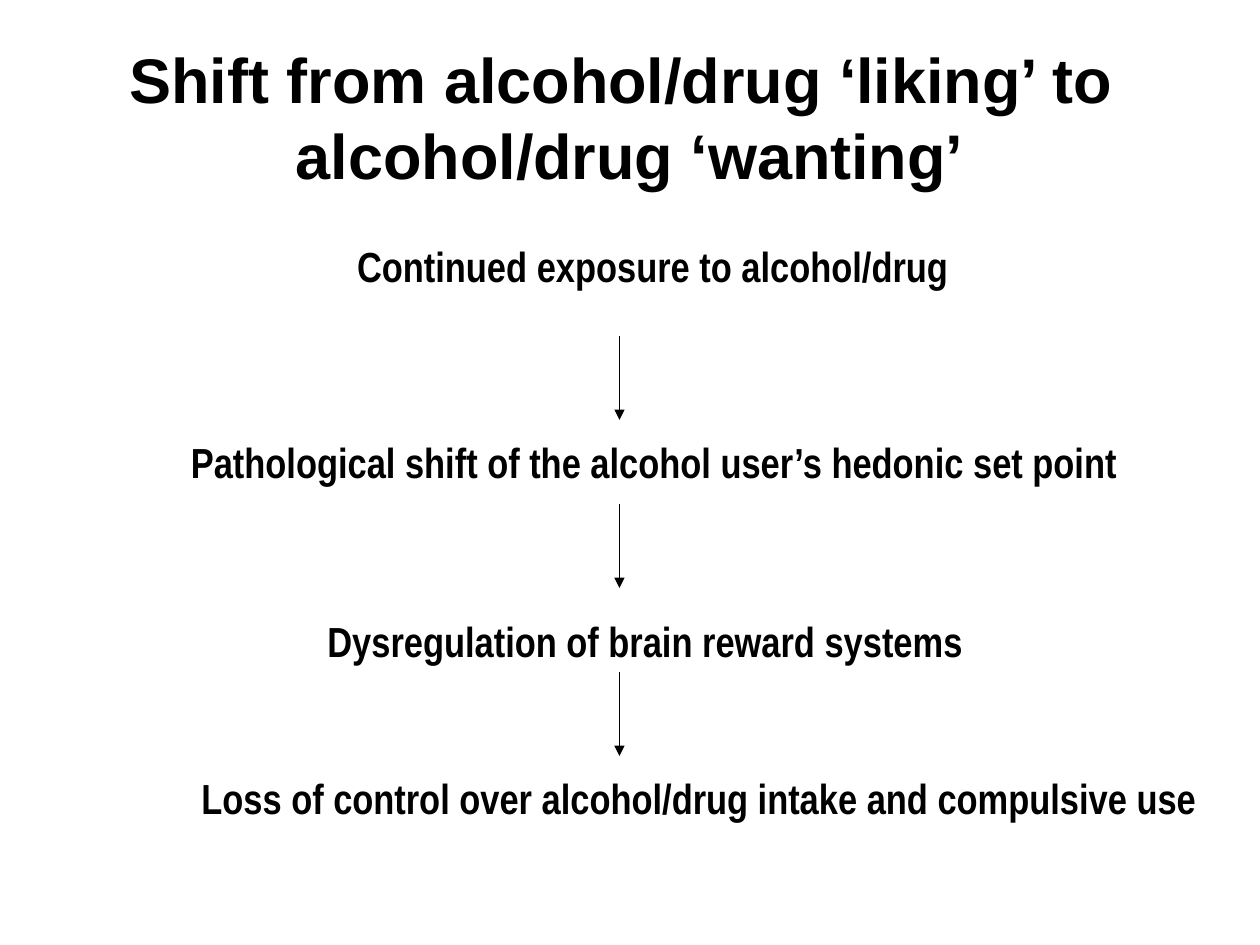
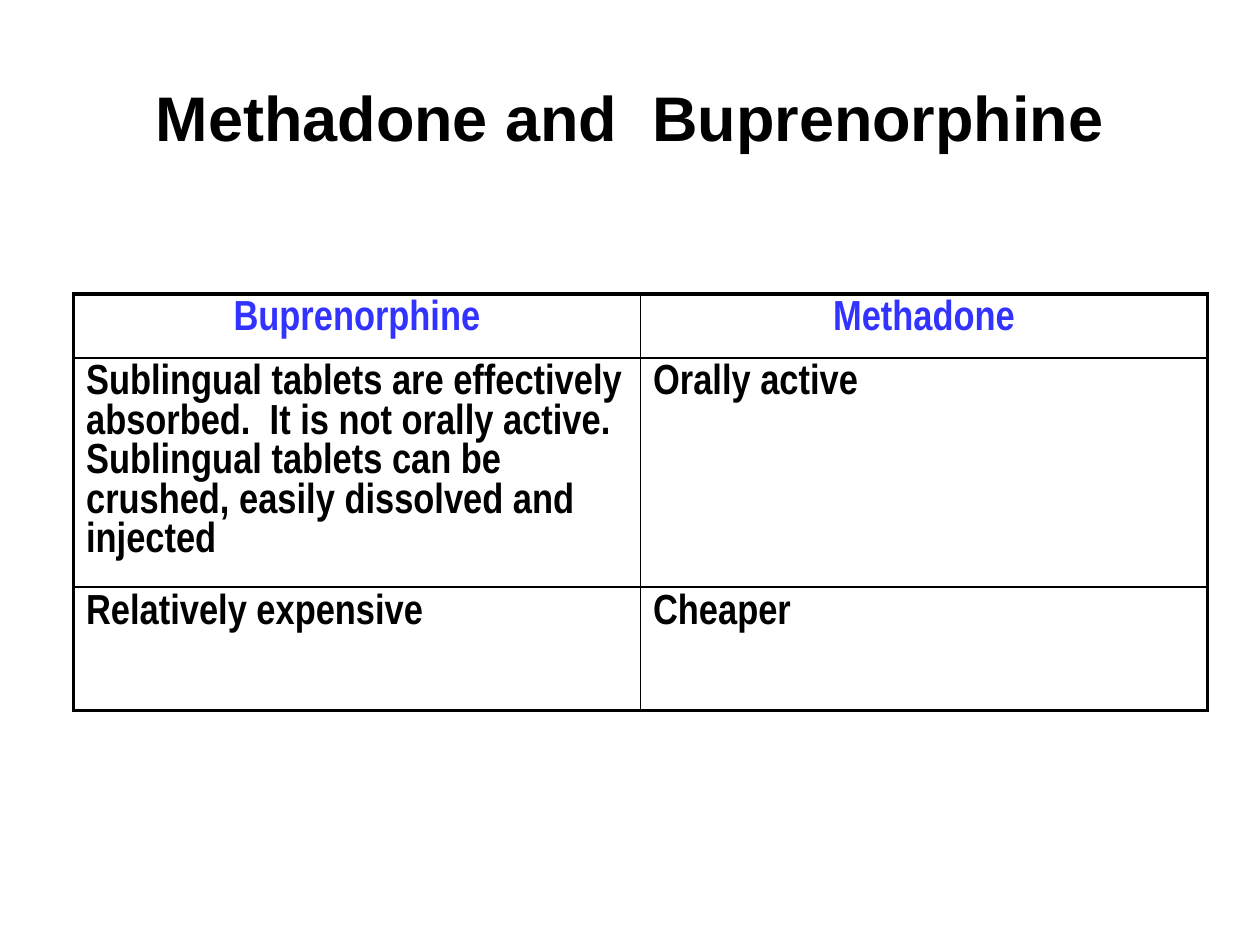
from dataclasses import dataclass

from lxml.etree import SubElement
from pptx import Presentation
from pptx.dml.color import RGBColor
from pptx.enum.shapes import MSO_CONNECTOR
from pptx.enum.text import MSO_ANCHOR, MSO_AUTO_SIZE, PP_ALIGN
from pptx.oxml import parse_xml
from pptx.oxml.ns import nsdecls, qn
from pptx.util import Pt


@dataclass(frozen=True)
class Theme:
    ink: RGBColor = RGBColor(0x00, 0x00, 0x00)
    heading: RGBColor = RGBColor(0x33, 0x33, 0xFF)
    title_font: str = "Arial"
    body_font: str = "Arial Narrow"
    title_size: Pt = Pt(36)
    body_size: Pt = Pt(24)
    thin: Pt = Pt(1)
    thick: Pt = Pt(2.25)


theme = Theme()


def add_span(para, text, font=theme.body_font, size=theme.body_size, color=theme.ink):
    span = para.add_run()
    span.text = text
    span.font.name = font
    span.font.size = size
    span.font.bold = True
    span.font.color.rgb = color


def add_titled_page(deck, lines):
    page = deck.slides.add_slide(deck.slide_layouts[5])
    title = page.shapes.title
    title.left, title.top, title.width, title.height = Pt(36), Pt(21.6), Pt(648), Pt(90)
    frame = title.text_frame
    frame.auto_size = MSO_AUTO_SIZE.NONE
    frame.vertical_anchor = MSO_ANCHOR.MIDDLE
    para = frame.paragraphs[0]
    para.alignment = PP_ALIGN.CENTER
    for number, line in enumerate(lines):
        if number:
            para.add_line_break()
        add_span(para, line, theme.title_font, theme.title_size)
    return page


deck = Presentation()
deck.slide_width, deck.slide_height = Pt(720), Pt(540)

# Slide 1: chain of effects from exposure to compulsive use
page = add_titled_page(deck, ["Shift from alcohol/drug ‘liking’ to ", "alcohol/drug ‘wanting’"])

stages = [
    ("Continued exposure to alcohol/drug", 197, 134, 360),
    ("Pathological shift of the alcohol user’s hedonic set point", 102, 246, 544),
    ("Dysregulation of brain reward systems", 180, 348, 378),
    ("Loss of control over alcohol/drug intake and compulsive use", 108, 438, 584),
]
for text, left, top, width in stages:
    box = page.shapes.add_textbox(Pt(left), Pt(top), Pt(width), Pt(36))
    box.text_frame.word_wrap = False
    add_span(box.text_frame.paragraphs[0], text)

# Arrows between the stages
arrow_x, first_arrow_top, arrow_step, arrow_length = 354, 192, 96, 48
for number in range(len(stages) - 1):
    top = first_arrow_top + number * arrow_step
    arrow = page.shapes.add_connector(
        MSO_CONNECTOR.STRAIGHT, Pt(arrow_x), Pt(top), Pt(arrow_x), Pt(top + arrow_length)
    )
    arrow.line.color.rgb = theme.ink
    arrow.line.width = Pt(0.75)
    SubElement(arrow.line._get_or_add_ln(), qn("a:tailEnd"), type="triangle")
    SubElement(arrow._element.spPr, qn("a:effectLst"))

# Slide 2: comparison table
page = add_titled_page(deck, ["Methadone and  Buprenorphine"])

comparison = [
    ("Buprenorphine", "Methadone"),
    (
        "Sublingual tablets are effectively absorbed.  It is not orally active. "
        "Sublingual tablets can be crushed, easily dissolved and injected",
        "Orally active",
    ),
    ("Relatively expensive", "Cheaper"),
]
row_heights = [36.5, 131, 70.5]
table = page.shapes.add_table(3, 2, Pt(42), Pt(168), Pt(648), Pt(sum(row_heights))).table
table.first_row = False
table.horz_banding = False
for column in table.columns:
    column.width = Pt(324)

last_row, last_column = len(comparison) - 1, len(comparison[0]) - 1
for r, texts in enumerate(comparison):
    table.rows[r].height = Pt(row_heights[r])
    for c, text in enumerate(texts):
        cell = table.cell(r, c)
        cell.fill.background()
        para = cell.text_frame.paragraphs[0]
        para.alignment = PP_ALIGN.LEFT if r else PP_ALIGN.CENTER
        add_span(para, text, color=theme.ink if r else theme.heading)

        # Thick frame outside, thin rules inside
        outer_edges = {"L": c == 0, "R": c == last_column, "T": r == 0, "B": r == last_row}
        for position, (side, is_outer) in enumerate(outer_edges.items()):
            width = theme.thick if is_outer else theme.thin
            border = parse_xml(
                f'<a:ln{side} {nsdecls("a")} w="{int(width)}"><a:solidFill>'
                f'<a:srgbClr val="{theme.ink}"/></a:solidFill></a:ln{side}>'
            )
            cell._tc.get_or_add_tcPr().insert(position, border)

deck.save("out.pptx")
